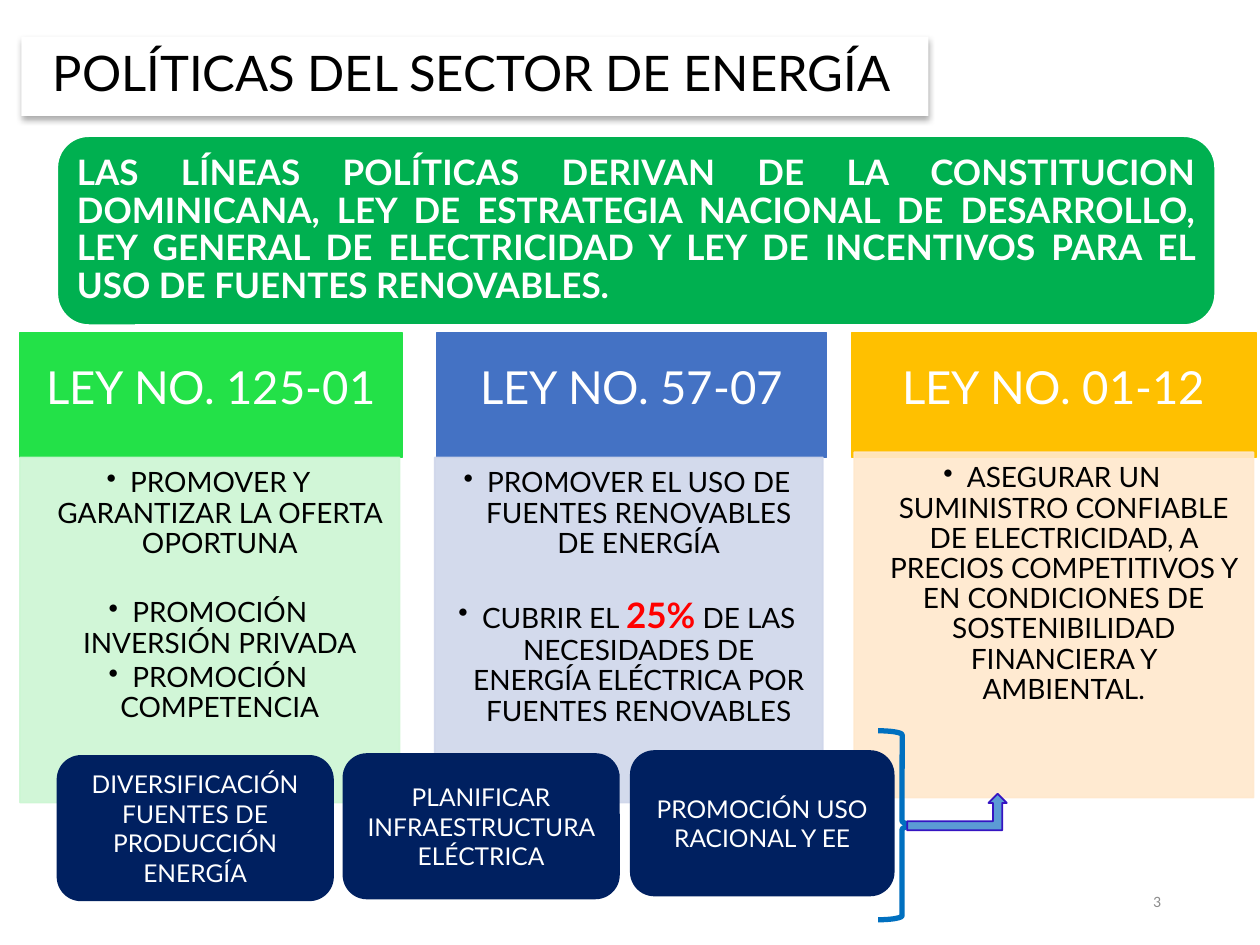
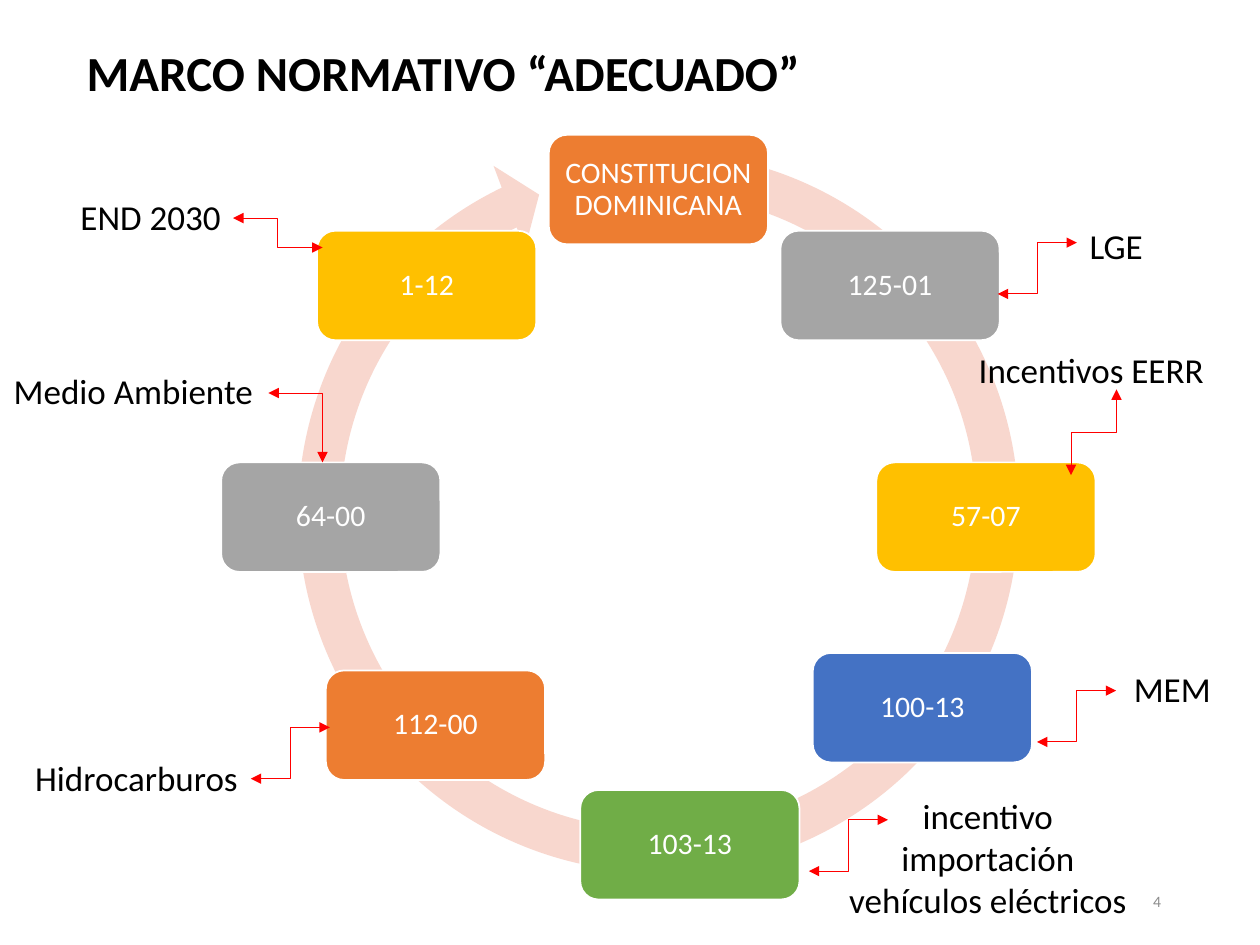
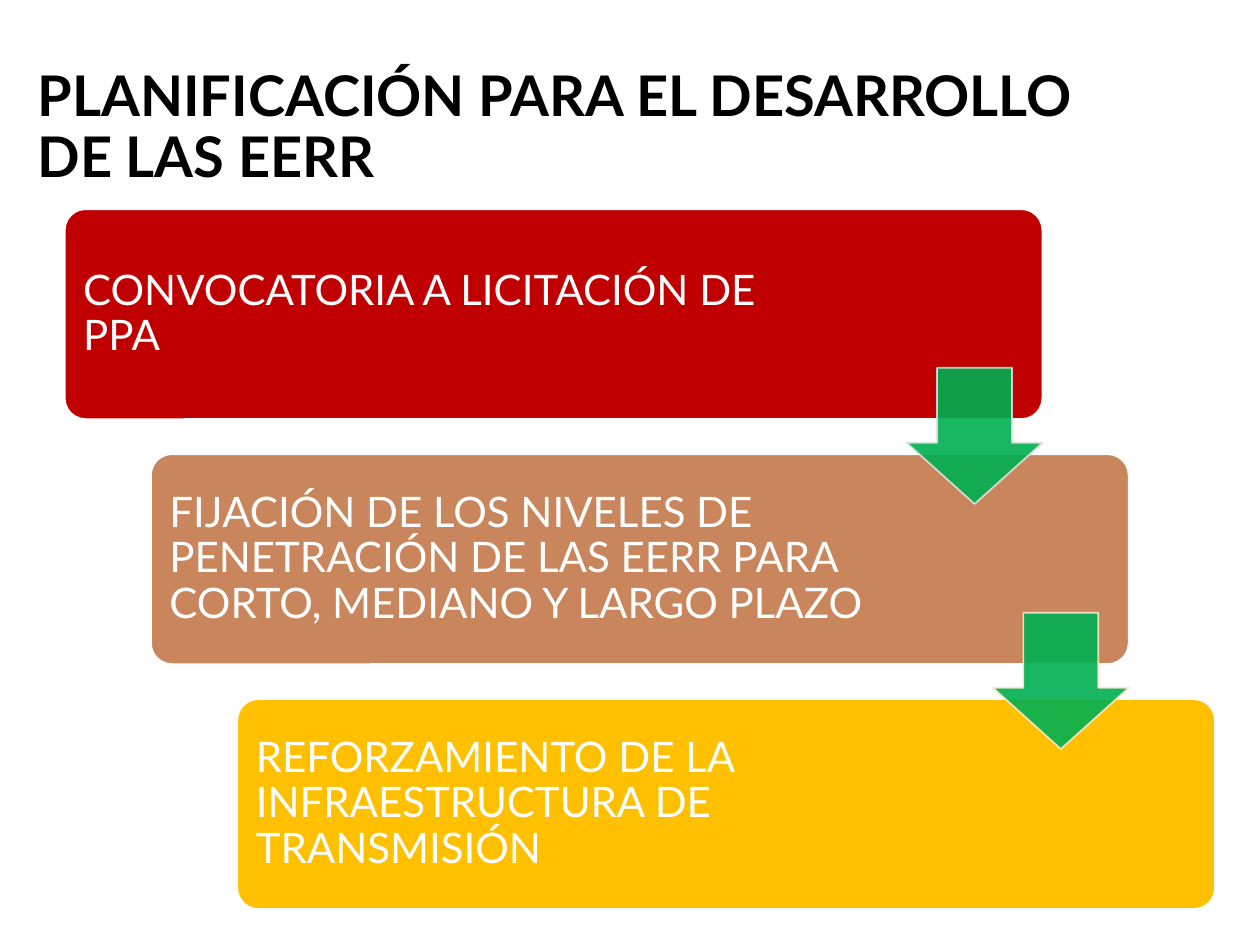
from math import cos, radians, sin

from lxml.etree import SubElement as Sub
from pptx import Presentation
from pptx.dml.color import RGBColor
from pptx.enum.shapes import MSO_CONNECTOR as Link, MSO_SHAPE as Geo
from pptx.enum.text import MSO_ANCHOR as Anchor, PP_ALIGN as Align
from pptx.oxml.ns import qn
from pptx.util import Pt

BLACK = RGBColor(0x00, 0x00, 0x00)
WHITE = RGBColor(0xFF, 0xFF, 0xFF)
GRAY = RGBColor(0x8C, 0x8C, 0x8C)
SILVER = RGBColor(0xA5, 0xA5, 0xA5)
PALE = RGBColor(0xE1, 0xE1, 0xE1)
RED = RGBColor(0xFF, 0x00, 0x00)
CRIMSON = RGBColor(0xC0, 0x00, 0x00)
COPPER = RGBColor(0xC9, 0x86, 0x5C)
ORANGE = RGBColor(0xED, 0x7D, 0x31)
GOLD = RGBColor(0xFF, 0xC0, 0x00)
CREAM = RGBColor(0xFF, 0xE8, 0xCC)
PINK = RGBColor(0xF8, 0xD7, 0xCE)
GREEN = RGBColor(0x00, 0xB0, 0x50)
LEAF = RGBColor(0x70, 0xAD, 0x47)
LIME = RGBColor(0x23, 0xE1, 0x48)
MINT = RGBColor(0xCC, 0xF6, 0xD3)
BLUE = RGBColor(0x44, 0x72, 0xC4)
MIST = RGBColor(0xCF, 0xD6, 0xEA)
NAVY = RGBColor(0x00, 0x20, 0x60)
AZURE = RGBColor(0x00, 0x70, 0xC0)
SKY = RGBColor(0x5B, 0x9B, 0xD5)
VIOLET = RGBColor(0x35, 0x14, 0xC2)

LATO, CALIBRI = "Lato", "Calibri"
TIGHT = {"line_spacing": 0.9}
MID = {"alignment": Align.CENTER}
MIDTIGHT = {**TIGHT, **MID}
CENTER = {"vertical_anchor": Anchor.MIDDLE}


def apply(item, values):
    for key, value in values.items():
        setattr(item, key, value)


def face(name, size, color, bold=False):
    return {"name": name, "size": Pt(size), "bold": bold}, color


def pads(left, top=None, right=None, bottom=None):
    sides = (left, left if top is None else top,
             left if right is None else right, left if bottom is None else bottom)
    names = ("margin_left", "margin_top", "margin_right", "margin_bottom")
    return {name: Pt(side) for name, side in zip(names, sides)}


def bullet(para, indent):
    props = para._p.get_or_add_pPr()
    props.set("marL", str(Pt(indent)))
    props.set("indent", str(-Pt(indent)))
    Sub(props, qn("a:buChar"), char="•")


def write(shape, paras, look, frame={}, layout={}, indent=0):
    text = shape.text_frame
    apply(text, {"word_wrap": True, "vertical_anchor": Anchor.TOP, **frame})
    for count, (runs, extra) in enumerate(paras):
        para = text.add_paragraph() if count else text.paragraphs[0]
        apply(para, {"alignment": Align.LEFT, **layout, **extra})
        if indent:
            bullet(para, indent)
        for words, own in runs:
            run = para.add_run()
            run.text = words
            values, color = own or look
            apply(run.font, values)
            run.font.color.rgb = color


def say(shape, words, look, frame={}, layout={}):
    write(shape, [([(words, None)], {})], look, frame, layout)


def label(slide, box, words, look, frame={}, layout={}):
    area = slide.shapes.add_textbox(*map(Pt, box))
    say(area, words, look, frame, layout)


def draw(slide, geo, box, fill=None, line=None, width=1, adjust=(), alpha=None):
    shape = slide.shapes.add_shape(geo, *map(Pt, box))
    shape.shadow.inherit = False
    if fill is None:
        shape.fill.background()
    else:
        shape.fill.solid()
        shape.fill.fore_color.rgb = fill
    if line is None:
        shape.line.fill.background()
    else:
        shape.line.color.rgb = line
        shape.line.width = Pt(width)
    for spot, value in enumerate(adjust):
        shape.adjustments[spot] = value
    if alpha:
        for color in list(shape._element.spPr.iter(qn("a:srgbClr"))):
            Sub(color, qn("a:alpha"), val=str(alpha * 1000))
    return shape


def cast(shape):
    effects = shape._element.spPr.find(qn("a:effectLst"))
    shade = Sub(effects, qn("a:outerShdw"), blurRad=str(Pt(3.5)),
                dist=str(Pt(2.2)), dir="5400000", algn="t", rotWithShape="0")
    color = Sub(shade, qn("a:srgbClr"), val=str(BLACK))
    Sub(color, qn("a:alpha"), val="32000")


def elbow(slide, start, end, kind="bentConnector3", turn=0):
    line = slide.shapes.add_connector(Link.ELBOW, *map(Pt, start + end))
    props = line._element.spPr
    props.find(qn("a:prstGeom")).set("prst", kind)
    if turn:
        props.find(qn("a:xfrm")).set("rot", str(turn * 60000))
    line.line.color.rgb = RED
    line.line.width = Pt(0.5)
    stroke = props.find(qn("a:ln"))
    for tip in ("a:headEnd", "a:tailEnd"):
        Sub(stroke, qn(tip), type="triangle")
    Sub(props, qn("a:effectLst"))


def number(slide, value):
    label(slide, (508.5, 500.5, 162, 28.75), str(value), face(CALIBRI, 9, GRAY),
          CENTER, {"alignment": Align.RIGHT})


def column(slide, box, shift, trim, head, color, tint, items):
    left, top, width, height = box
    cap = draw(slide, Geo.RECTANGLE, box, color, color)
    say(cap, head, face(LATO, 26, WHITE), {**CENTER, **pads(14.4, 8.6)}, MIDTIGHT)
    body = draw(slide, Geo.RECTANGLE,
                (left + shift[0], top + height + shift[1], width - trim, 197.3),
                tint, tint, alpha=90)
    write(body, items, face(LATO, 16, BLACK), pads(6.5, 6.5, 8.6, 10),
          {**MIDTIGHT, "space_after": Pt(2.4)}, 13.5)


def policies(slide):
    number(slide, 3)
    title = draw(slide, Geo.RECTANGLE, (12.2, 20.9, 518.4, 45.4), WHITE)
    cast(title)
    say(title, "POLÍTICAS DEL SECTOR DE ENERGÍA", face(LATO, 28, BLACK),
        pads(18, 3.6, 7.2))
    banner = draw(slide, Geo.ROUNDED_RECTANGLE, (32.7, 77.8, 661.7, 108), GREEN, WHITE)
    say(banner, "LAS LÍNEAS POLÍTICAS DERIVAN DE LA CONSTITUCION DOMINICANA, LEY DE "
        "ESTRATEGIA NACIONAL DE DESARROLLO, LEY GENERAL DE ELECTRICIDAD Y LEY DE "
        "INCENTIVOS PARA EL USO DE FUENTES RENOVABLES.",
        face(LATO, 20, WHITE, True), {**CENTER, **pads(6)},
        {**TIGHT, "alignment": Align.JUSTIFY})

    gap = {"space_before": Pt(20)}
    column(slide, (486.7, 190, 231.1, 71.4), (1.4, -2.9), 2.9,
           "LEY NO. 01-12", GOLD, CREAM, [
        ([("ASEGURAR UN SUMINISTRO CONFIABLE DE ELECTRICIDAD, A PRECIOS "
           "COMPETITIVOS Y EN CONDICIONES DE SOSTENIBILIDAD FINANCIERA Y "
           "AMBIENTAL.", None)], {})])
    column(slide, (11.5, 190, 218.2, 71.4), (0, 0), 1.4,
           "LEY NO. 125-01", LIME, MINT, [
        ([("PROMOVER Y GARANTIZAR LA OFERTA OPORTUNA", None)], {}),
        ([("PROMOCIÓN INVERSIÓN PRIVADA", None)], gap),
        ([("PROMOCIÓN COMPETENCIA", None)], {})])
    column(slide, (249.8, 190, 222.5, 71.4), (-1.4, 0), 0.7,
           "LEY NO. 57-07", BLUE, MIST, [
        ([("PROMOVER EL USO DE FUENTES RENOVABLES DE ENERGÍA", None)], {}),
        ([("CUBRIR EL ", None), ("25%", face(LATO, 20, RED, True)),
          (" DE LAS NECESIDADES DE ENERGÍA ELÉCTRICA POR FUENTES RENOVABLES", None)],
         gap)])

    goals = [(32.4, 431.5, 158.4, "DIVERSIFICACIÓN FUENTES DE PRODUCCIÓN ENERGÍA"),
             (195.8, 430.4, 158.4, "PLANIFICAR INFRAESTRUCTURA ELÉCTRICA"),
             (360, 428.7, 151.2, "PROMOCIÓN USO RACIONAL Y EE")]
    for left, top, width, words in goals:
        goal = draw(slide, Geo.ROUNDED_RECTANGLE, (left, top, width, 83.5), NAVY)
        say(goal, words, face(LATO, 14, WHITE), CENTER, MID)
    draw(slide, Geo.RIGHT_BRACE, (501.8, 417.6, 27.4, 108), line=AZURE, width=3)
    draw(slide, Geo.BENT_UP_ARROW, (518.4, 453.6, 56.9, 20.9), SKY, VIOLET)


def ring(slide, box):
    left, top, size, _ = box
    draw(slide, Geo.CIRCULAR_ARROW, box, PINK,
         adjust=(0.055, 3.307, 146.337, 168.83, 0.058))
    wide, high, reach = 125.3, 62.6, 187.2
    nodes = [("CONSTITUCION DOMINICANA", ORANGE, 0, 0), ("125-01", SILVER, 0, 0),
             ("57-07", GOLD, 0, 0), ("100-13", BLUE, 18.5, -23.5),
             ("103-13", LEAF, 18, 0), ("112-00", ORANGE, 5, -13.5),
             ("64-00", SILVER, 0, 0), ("1-12", GOLD, 0, 0)]
    for count, (words, color, right, down) in enumerate(nodes):
        angle = radians(360 / len(nodes) * count)
        across = left + size / 2 + reach * sin(angle) + right
        along = top + size / 2 + 2.9 - reach * cos(angle) + down
        node = draw(slide, Geo.ROUNDED_RECTANGLE,
                    (across - wide / 2, along - high / 2, wide, high), color, WHITE)
        say(node, words, face(CALIBRI, 17, WHITE), {**CENTER, **pads(4.8)}, MIDTIGHT)


def norms(slide):
    number(slide, 4)
    ring(slide, (157, 73.4, 438.5, 438.5))
    label(slide, (42.5, 20.9, 436.3, 41), "MARCO NORMATIVO “ADECUADO”",
          face(CALIBRI, 28, BLACK, True))
    look = face(CALIBRI, 20, BLACK)
    names = [(38.9, 108, 95, "END 2030"), (0.7, 207.7, 152.6, "Medio Ambiente"),
             (13, 428.7, 131.8, "Hidrocarburos"), (640.8, 378, 59, "MEM"),
             (552.2, 195.8, 144.7, "Incentivos EERR"), (615.6, 124.6, 45.4, "LGE")]
    for left, top, width, words in names:
        label(slide, (left, top, width, 31.5), words, look, {"word_wrap": False})
    label(slide, (477.4, 450.7, 174.2, 80), "incentivo importación vehículos eléctricos",
          look, pads(6.5, 3.6), MID)
    elbow(slide, (133.2, 124.6), (184.3, 141.4))
    elbow(slide, (153.4, 224.6), (184.3, 264.2), "bentConnector2")
    for left, low in ((143.3, 445), (462.2, 497.8), (592.6, 424), (570.2, 168)):
        elbow(slide, (left, low), (left + 45.2, low - 29.3))
    elbow(slide, (600.5, 234), (649.5, 260), turn=270)


def steps(slide, box):
    left, top, width, height = box
    plans = [("CONVOCATORIA A LICITACIÓN DE PPA", CRIMSON),
             ("FIJACIÓN DE LOS NIVELES DE PENETRACIÓN DE LAS EERR PARA CORTO, "
              "MEDIANO Y LARGO PLAZO", COPPER),
             ("REFORZAMIENTO DE LA INFRAESTRUCTURA DE TRANSMISIÓN", GOLD)]
    spots = [(left + 49.3 * count, top + 140 * count) for count in range(len(plans))]
    for (across, down), (words, color) in zip(spots, plans):
        step = draw(slide, Geo.ROUNDED_RECTANGLE, (across, down, width, height),
                    color, WHITE, adjust=(0.1,))
        say(step, words, face(LATO, 24, WHITE),
            {**CENTER, **pads(7.2, 7.2, 134)}, TIGHT)
    for (across, down), line in zip(spots, (PALE, CREAM)):
        draw(slide, Geo.DOWN_ARROW, (across + 481, down + 90.7, 77.8, 77.8),
             GREEN, line, adjust=(0.55, 0.45), alpha=90)


def planning(slide):
    label(slide, (14.4, 31.7, 652.3, 84.2),
          "PLANIFICACIÓN PARA EL DESARROLLO DE LAS EERR",
          face(LATO, 32, BLACK, True), CENTER, TIGHT)
    steps(slide, (37, 119.5, 558.7, 120))


def main():
    deck = Presentation()
    apply(deck, {"slide_width": Pt(720), "slide_height": Pt(540)})
    for build in (policies, norms, planning):
        build(deck.slides.add_slide(deck.slide_layouts[6]))
    deck.save("out.pptx")


if __name__ == "__main__":
    main()
